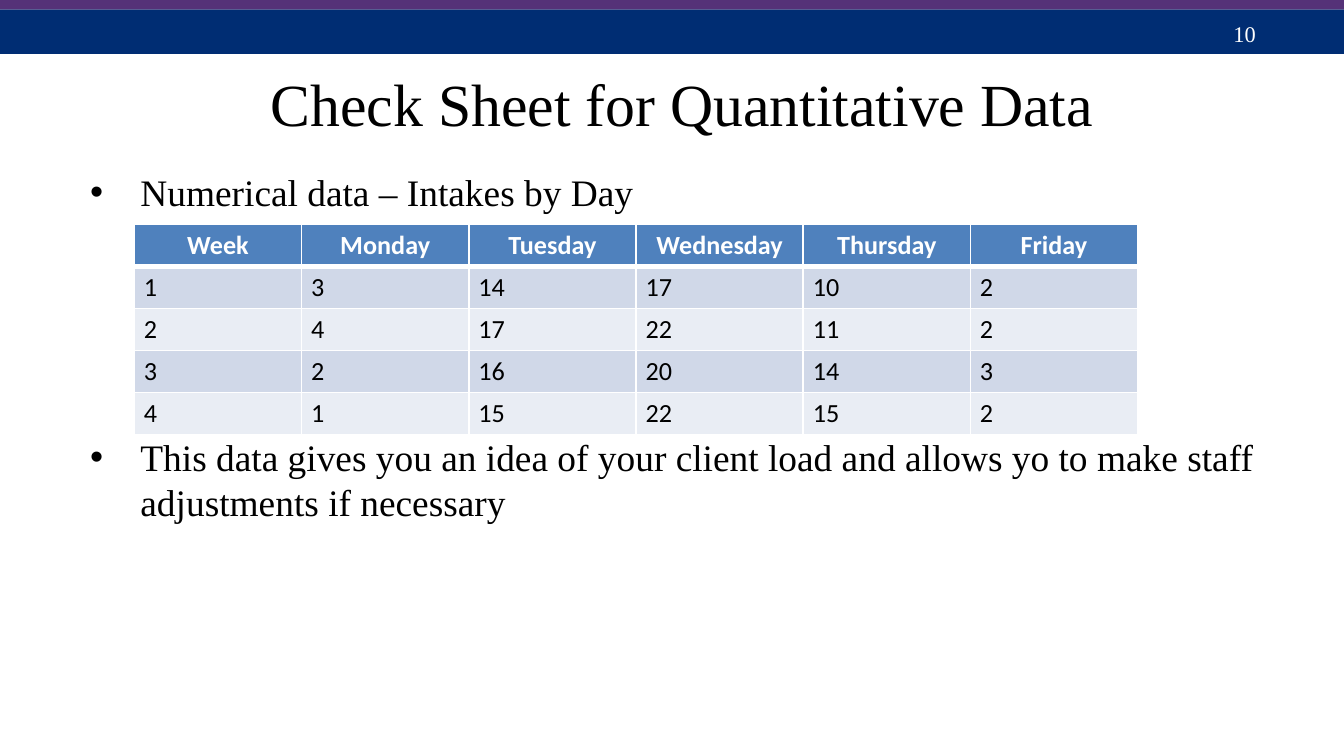
from lxml import etree
from pptx import Presentation, util as u
from pptx.dml import color
from pptx.enum import shapes, text
from pptx.oxml import ns

SERIF = "Times New Roman"


def rgb(value):
    return color.RGBColor.from_string(value)


def apply(target, values, ink=None):
    for key, value in values.items():
        setattr(target, key, value)
    if ink:
        target.color.rgb = rgb(ink)


deck = Presentation()
apply(deck, {"slide_width": u.Cm(25.4), "slide_height": u.Cm(14.29)})
slide = deck.slides.add_slide(deck.slide_layouts[1])

for top, height, fill in [(0.18, 0.84, "002D73"), (-0.05, 0.23, "553278")]:
    band = slide.shapes.add_shape(
        shapes.MSO_SHAPE.RECTANGLE, 0, u.Cm(top), deck.slide_width, u.Cm(height))
    band.shadow.inherit = False
    band.fill.solid()
    band.fill.fore_color.rgb = rgb(fill)
    band.line.fill.background()

page_number = slide.shapes.add_textbox(u.Cm(23.06), u.Cm(0.25), u.Cm(1.9), u.Cm(0.76))
page_number.text_frame.word_wrap = True
page_number.text_frame.text = "10"
apply(page_number.text_frame.paragraphs[0].font,
      {"name": SERIF, "size": u.Pt(12)}, "FFFFFF")

heading = slide.shapes.title
apply(heading, {"left": u.Cm(1.47), "top": u.Cm(1.35),
                "width": u.Cm(22.86), "height": u.Cm(1.19)})
apply(heading.text_frame, {"text": "Check Sheet for Quantitative Data",
                           "auto_size": text.MSO_AUTO_SIZE.NONE,
                           "vertical_anchor": text.MSO_ANCHOR.MIDDLE})
heading.text_frame.paragraphs[0].alignment = text.PP_ALIGN.CENTER
apply(heading.text_frame.paragraphs[0].font,
      {"name": SERIF, "size": u.Pt(32)}, "000000")

points = slide.placeholders[1]
apply(points, {"left": u.Cm(1.45), "top": u.Cm(3.07),
               "width": u.Cm(22.86), "height": u.Cm(7.87)})
apply(points.text_frame, {
    "text": "Numerical data – Intakes by Day\n"
            "This data gives you an idea of your client load and allows yo "
            "to make staff adjustments if necessary",
    "auto_size": text.MSO_AUTO_SIZE.NONE})
for point, gap in zip(points.text_frame.paragraphs, (0, 118)):
    properties = point._p.get_or_add_pPr()
    properties.set("marL", str(u.Cm(0.95)))
    properties.set("indent", str(-u.Cm(0.95)))
    etree.SubElement(properties, ns.qn("a:buFont")).set("typeface", "Arial")
    etree.SubElement(properties, ns.qn("a:buChar")).set("char", "•")
    point.space_before = u.Pt(gap)
    apply(point.font, {"name": SERIF, "size": u.Pt(20)}, "000000")

intakes = [
    ["Week", "Monday", "Tuesday", "Wednesday", "Thursday", "Friday"],
    [1, 3, 14, 17, 10, 2],
    [2, 4, 17, 22, 11, 2],
    [3, 2, 16, 20, 14, 3],
    [4, 1, 15, 22, 15, 2],
]
check_sheet = slide.shapes.add_table(
    len(intakes), len(intakes[0]),
    u.Cm(2.54), u.Cm(4.24), u.Cm(18.96), u.Cm(3.95)).table
cell_format = {"margin_left": u.Cm(0.18), "margin_right": u.Cm(0.18),
               "margin_top": u.Cm(0.1), "margin_bottom": u.Cm(0.1)}

for week, counts in enumerate(intakes):
    is_header = week == 0
    fill = "4F81BD" if is_header else ("E9EDF4", "D0D8E8")[week % 2]
    for day, count in enumerate(counts):
        cell = check_sheet.cell(week, day)
        apply(cell, {"text": str(count), **cell_format})
        entry = cell.text_frame.paragraphs[0]
        entry.alignment = text.PP_ALIGN.CENTER if is_header else text.PP_ALIGN.LEFT
        apply(entry.font, {"name": "Calibri", "size": u.Pt(14), "bold": is_header},
              "FFFFFF" if is_header else "000000")
        for side in "LRTB":
            thick = (is_header and side == "B") or (week == 1 and side == "T")
            border = etree.SubElement(cell._tc.get_or_add_tcPr(), ns.qn(f"a:ln{side}"))
            border.set("w", str(u.Pt(3 if thick else 1)))
            paint = etree.SubElement(border, ns.qn("a:solidFill"))
            etree.SubElement(paint, ns.qn("a:srgbClr")).set("val", "FFFFFF")
        cell.fill.solid()
        cell.fill.fore_color.rgb = rgb(fill)

deck.save("out.pptx")
